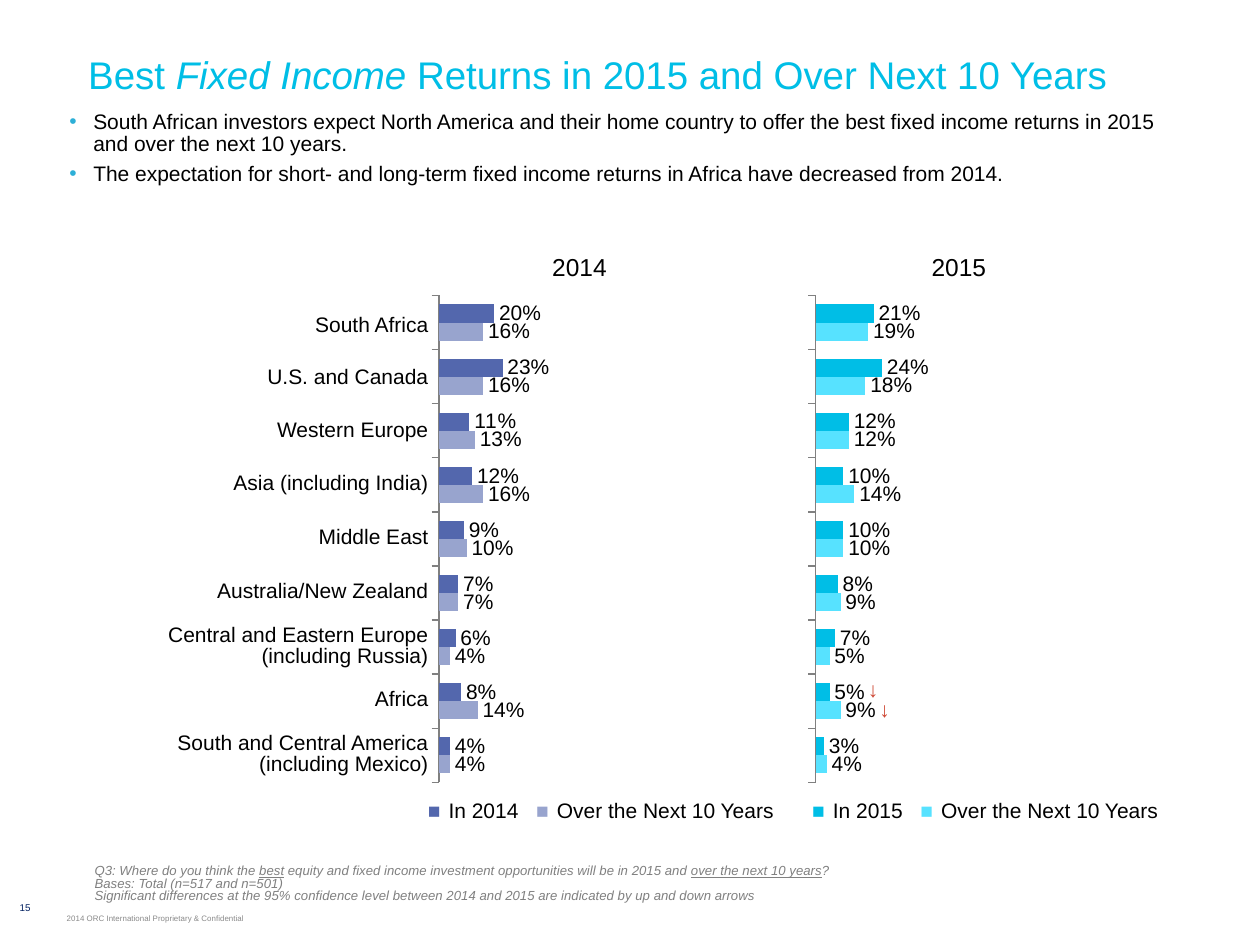
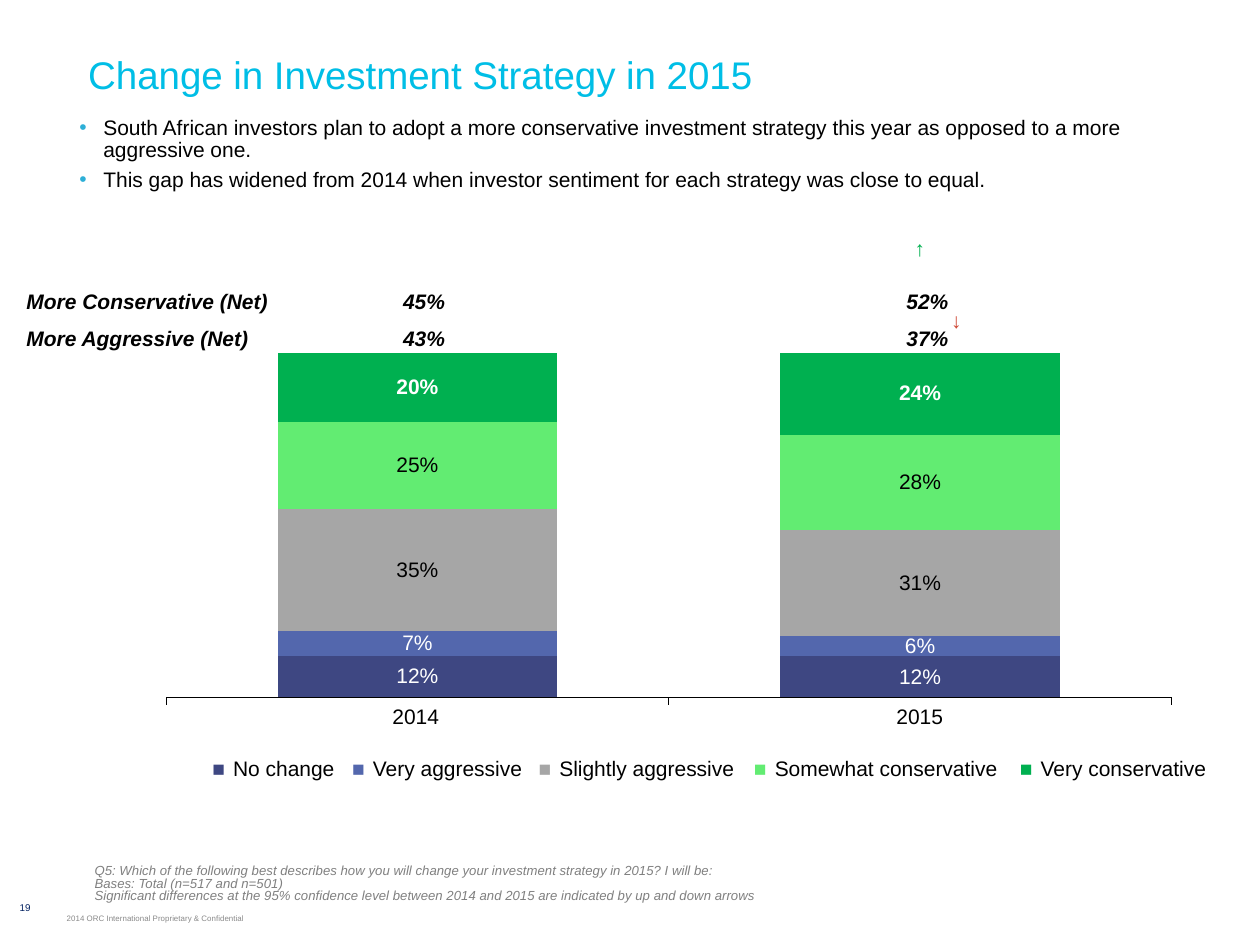
from lxml import etree
from pptx import Presentation
from pptx.chart.data import CategoryChartData
from pptx.dml.color import RGBColor
from pptx.enum.chart import XL_CHART_TYPE, XL_LABEL_POSITION, XL_TICK_LABEL_POSITION, XL_TICK_MARK
from pptx.enum.text import MSO_ANCHOR, MSO_AUTO_SIZE, PP_ALIGN
from pptx.oxml.ns import qn
from pptx.util import Inches, Pt

LEFT, CENTER, RIGHT = PP_ALIGN.LEFT, PP_ALIGN.CENTER, PP_ALIGN.RIGHT
TOP, MIDDLE, BOTTOM = MSO_ANCHOR.TOP, MSO_ANCHOR.MIDDLE, MSO_ANCHOR.BOTTOM
BAR, STACKED = XL_CHART_TYPE.BAR_CLUSTERED, XL_CHART_TYPE.COLUMN_STACKED_100
OUTSIDE, INSIDE = XL_LABEL_POSITION.OUTSIDE_END, XL_LABEL_POSITION.CENTER
NO_LABELS = XL_TICK_LABEL_POSITION.NONE
TICK_OUT, TICK_NONE = XL_TICK_MARK.OUTSIDE, XL_TICK_MARK.NONE
NO_FIT = MSO_AUTO_SIZE.NONE

FONT = "Arial"
BLACK, WHITE, GREY = "000000", "FFFFFF", "808080"
CYAN, PALE_CYAN = "00BEE6", "57E2FF"
BLUE, PALE_BLUE, NAVY = "5367AD", "98A4CE", "3E4782"
GREEN, PALE_GREEN, SILVER, RED = "00B050", "62EC72", "A6A6A6", "CF4936"
BULLET = "2DAFD7"
NO_STYLE = "{2D5ABB26-0587-4C30-8999-92F81FD0307C}"
BASES = ["Bases: Total (n=517 and n=501)",
         "Significant differences at the 95% confidence level between 2014 and 2015 "
         "are indicated by up and down arrows"]


def rgb(value):
    return RGBColor.from_string(value)


def style(font, size=12, color=BLACK, bold=False, italic=False, underline=False):
    font.name, font.size = FONT, Pt(size)
    font.bold, font.italic, font.underline = bold, italic, underline
    font.color.rgb = rgb(color)


def put_text(p, text, align=LEFT, spacing=1.0, **fmt):
    """Fill a paragraph with a string or with a list of (text, format) runs."""
    p.alignment, p.line_spacing = align, spacing
    p.space_before = p.space_after = Pt(0)
    runs = [(text, {})] if isinstance(text, str) else text
    for part, extra in runs:
        r = p.add_run()
        r.text = part
        style(r.font, **{**fmt, **extra})


def put_lines(tf, lines, **fmt):
    for i, line in enumerate(lines):
        put_text(tf.add_paragraph() if i else tf.paragraphs[0], line, **fmt)


def set_frame(tf, anchor=TOP, insets=(0.1, 0.05, 0.1, 0.05), wrap=True):
    tf.auto_size, tf.word_wrap, tf.vertical_anchor = NO_FIT, wrap, anchor
    (tf.margin_left, tf.margin_top,
     tf.margin_right, tf.margin_bottom) = map(Inches, insets)


def place(sp, box):
    sp.left, sp.top, sp.width, sp.height = map(Inches, box)


def add_text(s, box, lines, anchor=TOP, insets=(0.1, 0.05, 0.1, 0.05), wrap=True, **fmt):
    tf = s.shapes.add_textbox(*map(Inches, box)).text_frame
    set_frame(tf, anchor, insets, wrap)
    put_lines(tf, lines, **fmt)


def add_arrow(s, left, top, text="↓", color=RED):
    add_text(s, (left, top, 0.35, 0.3), [text], wrap=False, color=color, bold=True)


def add_bullet(p):
    pPr = p._p.get_or_add_pPr()
    pPr.set("marL", str(Inches(0.19)))
    pPr.set("indent", str(-Inches(0.19)))
    clr = etree.SubElement(pPr, qn("a:buClr"))
    etree.SubElement(clr, qn("a:srgbClr")).set("val", BULLET)
    etree.SubElement(pPr, qn("a:buFont")).set("typeface", FONT)
    etree.SubElement(pPr, qn("a:buChar")).set("char", "•")


def add_base_slide(prs, number, title, bullets, body_box, question):
    """Title, bullets, footnote, page number and footer line."""
    s = prs.slides.add_slide(prs.slide_layouts[1])
    sp = s.shapes.title
    place(sp, (0.6, 0.25, 9, 0.67))
    set_frame(sp.text_frame, MIDDLE)
    put_text(sp.text_frame.paragraphs[0], title, size=22, color=CYAN)

    body = s.placeholders[1]
    place(body, body_box)
    tf = body.text_frame
    set_frame(tf, insets=(0.05,) * 4)
    for i, bullet in enumerate(bullets):
        p = tf.add_paragraph() if i else tf.paragraphs[0]
        add_bullet(p)
        put_text(p, bullet, spacing=0.9)
        p.space_before, p.space_after = Pt(2 if i else 0), Pt(2)

    add_text(s, (0.74, 6.79, 7.79, 0.43), [question] + BASES, anchor=BOTTOM,
             insets=(0.01, 0.05, 0.05, 0.05), spacing=0.8, size=7.5, color=GREY, italic=True)
    footer = {"anchor": MIDDLE, "insets": (0, 0.03, 0, 0.03)}
    add_text(s, (0, 7, 0.4, 0.4), [number], align=CENTER, size=5.6, color="002060", **footer)
    add_text(s, (0.53, 7.19, 2.57, 0.2), ["2014 ORC International Proprietary & Confidential"],
             size=4.5, color="898989", **footer)
    return s


def add_table(s, left, top, cols, heights, rows):
    """Plain table; each cell is (text, format)."""
    frame = s.shapes.add_table(len(heights), len(cols), Inches(left), Inches(top),
                               Inches(sum(cols)), Inches(sum(heights)))
    tbl = frame.table
    tbl.first_row = tbl.horz_banding = False
    tbl._tbl.tblPr.find(qn("a:tableStyleId")).text = NO_STYLE
    for col, width in zip(tbl.columns, cols):
        col.width = Inches(width)
    for row, height, cells in zip(tbl.rows, heights, rows):
        row.height = Inches(height)
        for cell, (text, fmt) in zip(row.cells, cells):
            cell.fill.background()
            cell.vertical_anchor = MIDDLE
            cell.margin_left = cell.margin_right = cell.margin_top = Inches(0.01)
            cell.margin_bottom = Inches(0)
            put_text(cell.text_frame.paragraphs[0], text, **fmt)


def add_legend(s, left, top, entries):
    """Legend row of (name, colour, width) entries."""
    cols, cells = [], []
    for name, color, width in entries:
        cols += [0.21, width]
        cells += [("■", {"align": CENTER, "color": color}), (name, {})]
    add_table(s, left, top, cols, [0.22], [cells])


def set_plot_area(chart, box):
    plot_area = chart._chartSpace.chart.plotArea
    for old in plot_area.findall(qn("c:layout")):
        plot_area.remove(old)
    layout = etree.Element(qn("c:layout"))
    manual = etree.SubElement(layout, qn("c:manualLayout"))
    values = [("layoutTarget", "inner"), ("xMode", "edge"), ("yMode", "edge")]
    for tag, value in values + list(zip("xywh", box)):
        etree.SubElement(manual, qn("c:" + tag)).set("val", str(value))
    plot_area.insert(0, layout)


def add_chart(s, kind, box, series, plot_box, gap, unit, axis_line, label_position):
    """Chart without a value axis; series holds (values, colour, label format)."""
    data = CategoryChartData(number_format="0%")
    data.categories = [str(i + 1) for i in range(len(series[0][0]))]
    for i, (values, _, _) in enumerate(series, 1):
        data.add_series(f"Series {i}", values)
    chart = s.shapes.add_chart(kind, *map(Inches, box), data).chart
    chart.has_legend = chart.has_title = False
    style(chart.font)
    set_plot_area(chart, plot_box)

    axis = chart.value_axis
    axis.minimum_scale, axis.maximum_scale, axis.major_unit = 0, 1, unit
    axis.has_major_gridlines = axis.visible = False
    axis = chart.category_axis
    axis.tick_label_position = NO_LABELS
    axis.major_tick_mark, axis.minor_tick_mark = TICK_OUT, TICK_NONE
    axis.format.line.color.rgb = rgb(axis_line)
    axis.format.line.width = Pt(0.75)

    plot = chart.plots[0]
    plot.gap_width, plot.vary_by_categories = gap, False
    plot.overlap = 100 if kind == STACKED else 0
    for ser, (_, color, label) in zip(plot.series, series):
        ser.format.fill.solid()
        ser.format.fill.fore_color.rgb = rgb(color)
        labels = ser.data_labels
        labels.show_value, labels.position = True, label_position
        labels.number_format, labels.number_format_is_linked = "0%", False
        style(labels.font, **label)


def add_year_chart(s, year, left, legend_left, heading_left, next_ten, this_year, colors):
    """Heading, bars and legend of one survey year."""
    dark, pale = colors
    add_chart(s, BAR, (left, 2.27, 2.83, 3.98), [(next_ten, pale, {}), (this_year, dark, {})],
              (0.02, 0.019, 0.777, 0.971), 100, 0.05, GREY, OUTSIDE)
    add_legend(s, legend_left, 6.32,
               [(f"In {year}", dark, 0.65), ("Over the Next 10 Years", pale, 1.83)])
    add_text(s, (heading_left, 1.99, 0.64, 0.3), [year], wrap=False,
             align=CENTER, spacing=0.85, size=14)


def fixed_income_slide(prs):
    under = {"underline": True}
    s = add_base_slide(
        prs, "15",
        [("Best ", {}), ("Fixed Income", {"italic": True}),
         (" Returns in 2015 and Over Next 10 Years", {})],
        ["South African investors expect North America and their home country to offer the "
         "best fixed income returns in 2015 and over the next 10 years.",
         "The expectation for short- and long-term fixed income returns in Africa have "
         "decreased from 2014."],
        (0.5, 0.83, 9, 0.7),
        [("Q3: Where do you think the ", {}), ("best", under),
         (" equity and fixed income investment opportunities will be in 2015 and ", {}),
         ("over the next 10 years", under), ("?", {})])
    # Values run from the bottom region to the top one
    add_year_chart(s, "2014", 3.42, 3.34, 4.28,
                   [0.04, 0.14, 0.04, 0.07, 0.1, 0.16, 0.13, 0.16, 0.16],
                   [0.04, 0.08, 0.06, 0.07, 0.09, 0.12, 0.11, 0.23, 0.2], (BLUE, PALE_BLUE))
    add_year_chart(s, "2015", 6.41, 6.39, 7.29,
                   [0.04, 0.09, 0.05, 0.09, 0.1, 0.14, 0.12, 0.18, 0.19],
                   [0.03, 0.05, 0.07, 0.08, 0.1, 0.1, 0.12, 0.24, 0.21], (CYAN, PALE_CYAN))
    # Region names beside the bars
    regions = ["South Africa", "U.S. and Canada", "Western Europe", "Asia (including India)",
               "Middle East", "Australia/New Zealand",
               "Central and Eastern Europe (including Russia)", "Africa",
               "South and Central America (including Mexico)"]
    fmt = {"align": RIGHT, "spacing": 0.9}
    add_table(s, 0.72, 2.38, [2.69], [0.4, 0.43, 0.41] + [0.43] * 6,
              [[(region, fmt)] for region in regions])
    add_arrow(s, 6.79, 5.32)
    add_arrow(s, 6.88, 5.48)


def strategy_slide(prs):
    s = add_base_slide(
        prs, "19", "Change in Investment Strategy in 2015",
        ["South African investors plan to adopt a more conservative investment strategy this "
         "year as opposed to a more aggressive one.",
         "This gap has widened from 2014 when investor sentiment for each strategy was close "
         "to equal."],
        (0.58, 0.88, 9, 0.94),
        "Q5: Which of the following best describes how you will change your investment "
        "strategy in 2015? I will be:")
    # Stacked columns: name, colour, legend width, values, label format
    answers = [("No change", NAVY, 0.9, (0.12, 0.12), {"color": WHITE}),
               ("Very aggressive", BLUE, 1.27, (0.07, 0.06), {"color": WHITE}),
               ("Slightly aggressive", SILVER, 1.5, (0.35, 0.31), {}),
               ("Somewhat conservative", PALE_GREEN, 1.9, (0.25, 0.28), {}),
               ("Very conservative", GREEN, 1.38, (0.2, 0.24), {"color": WHITE, "bold": True})]
    add_chart(s, STACKED, (0.65, 2.57, 8.69, 3.27),
              [(values, color, label) for _, color, _, values, label in answers],
              (0.077, 0.07, 0.918, 0.837), 80, 0.25, BLACK, INSIDE)
    # Net figures above the columns
    name_fmt = {"spacing": 0.85, "bold": True, "italic": True}
    net_fmt = {**name_fmt, "align": CENTER}
    nets = [("More Conservative (Net)", "45%", "52%"), ("More Aggressive (Net)", "43%", "37%")]
    add_table(s, 0.2, 2.26, [2, 2.33, 1.58, 2.5], [0.2, 0.2],
              [[(name, name_fmt), (before, net_fmt), ("", net_fmt), (now, net_fmt)]
               for name, before, now in nets])
    # Years and legend below the columns
    add_table(s, 1.3, 5.54, [4, 4], [0.3],
              [[(year, {"align": CENTER}) for year in ("2014", "2015")]])
    add_legend(s, 1.63, 5.99, [answer[:3] for answer in answers])
    add_arrow(s, 7.45, 2.39)
    add_arrow(s, 7.16, 1.82, "↑", GREEN)


def main():
    prs = Presentation()
    prs.slide_width, prs.slide_height = Inches(10), Inches(7.5)
    fixed_income_slide(prs)
    strategy_slide(prs)
    prs.save("out.pptx")


if __name__ == "__main__":
    main()
